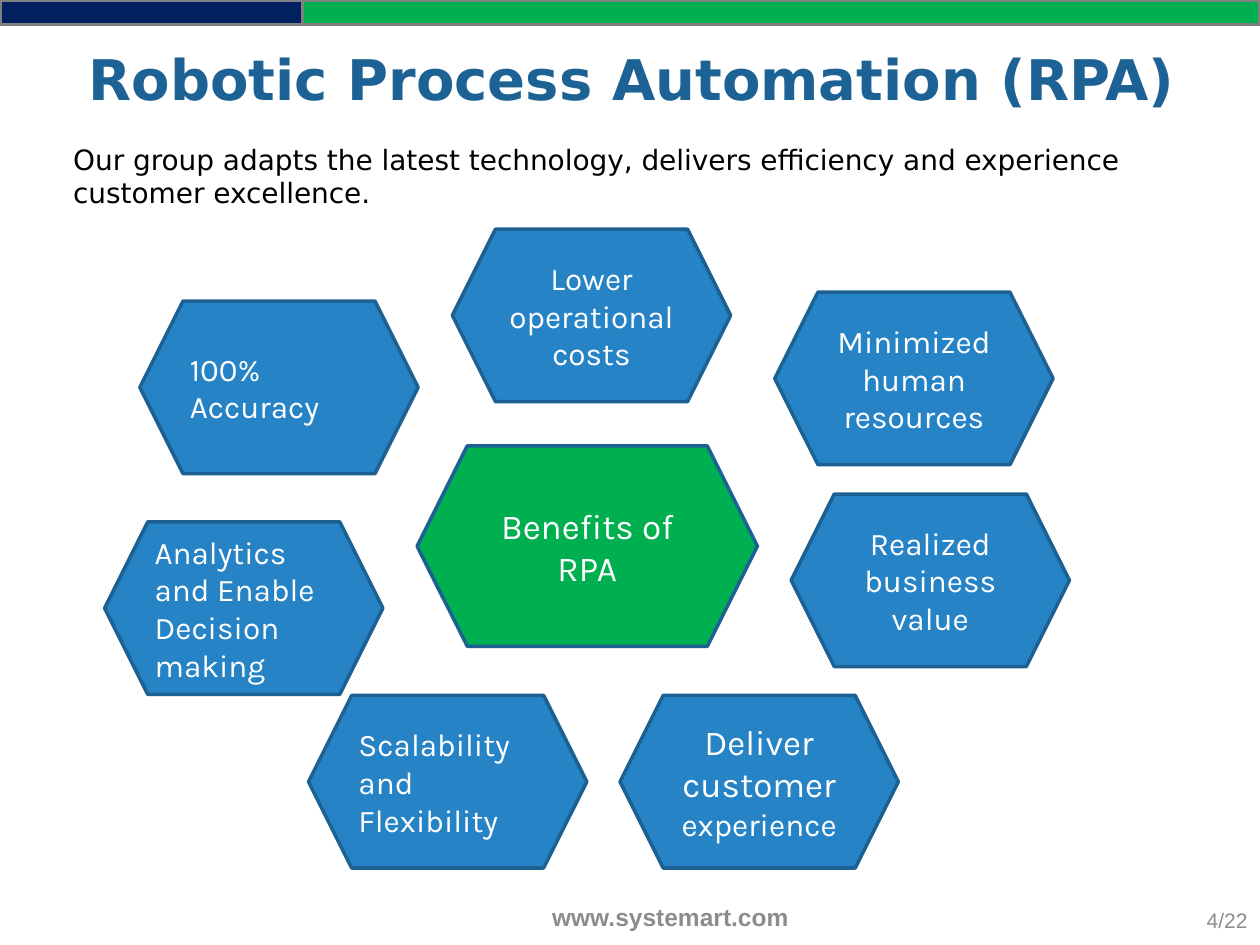
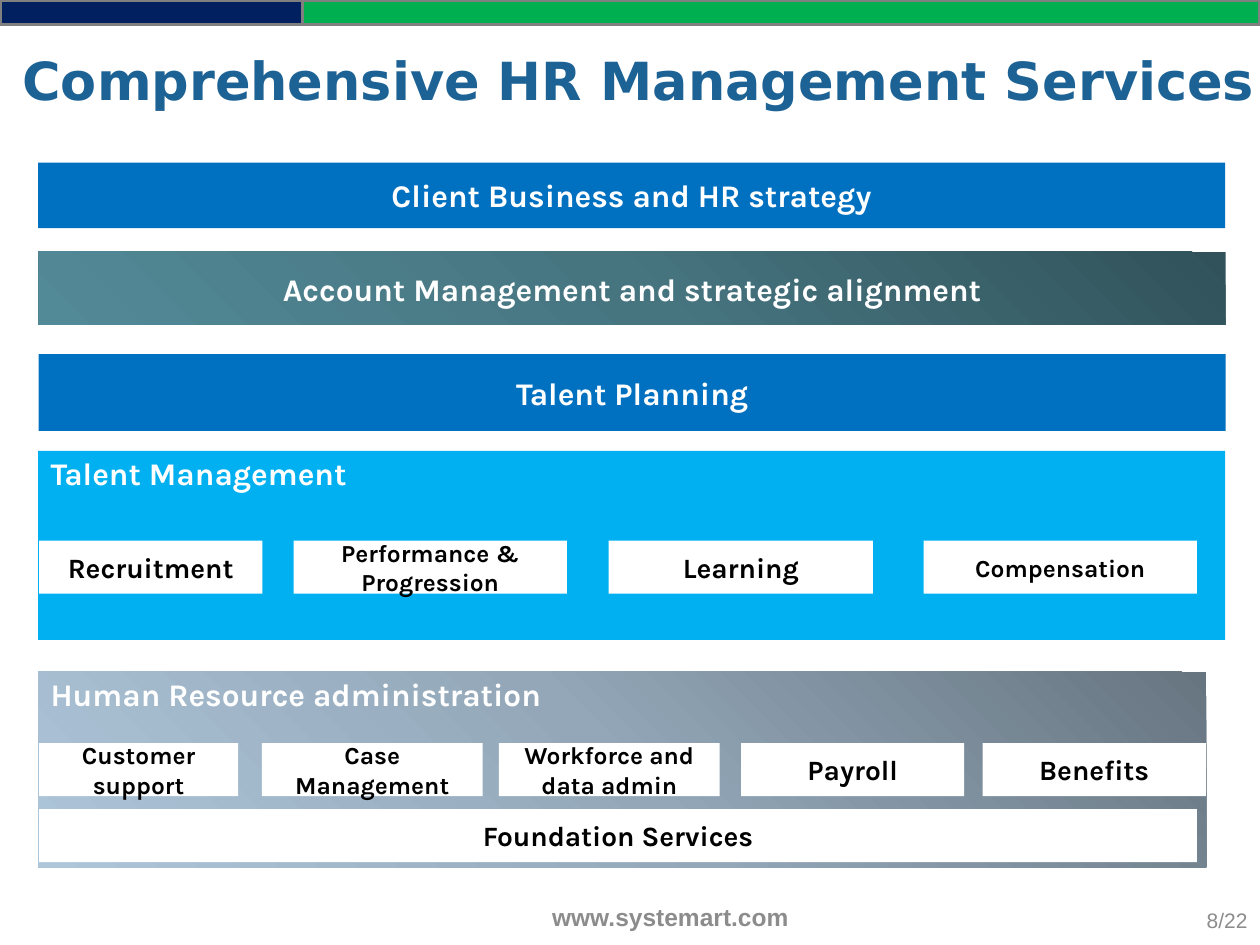
from copy import deepcopy
from dataclasses import dataclass
from typing import Optional

from pptx import Presentation
from pptx.dml.color import RGBColor
from pptx.enum.shapes import MSO_SHAPE
from pptx.enum.text import MSO_ANCHOR, MSO_AUTO_SIZE, PP_ALIGN
from pptx.oxml.ns import qn
from pptx.presentation import Presentation as Deck
from pptx.shapes.autoshape import Shape
from pptx.slide import Slide
from pptx.text.text import TextFrame
from pptx.util import Cm, Pt

WHITE = RGBColor(0xFF, 0xFF, 0xFF)
BLACK = RGBColor(0x00, 0x00, 0x00)
GREEN = RGBColor(0x00, 0xB0, 0x50)
NAVY = RGBColor(0x00, 0x20, 0x60)
BAND_EDGE = RGBColor(0x80, 0x80, 0x80)
TITLE_BLUE = RGBColor(0x1D, 0x62, 0x94)
FOOTER_GREY = RGBColor(0x8C, 0x8C, 0x8C)
HEXAGON_BLUE = RGBColor(0x26, 0x83, 0xC6)
HEXAGON_EDGE = RGBColor(0x1C, 0x61, 0x92)
STRATEGY_BLUE = RGBColor(0x00, 0x70, 0xC0)
TALENT_BLUE = RGBColor(0x00, 0xB0, 0xF0)
TEAL_GRADIENT = (RGBColor(0x31, 0x52, 0x5A), RGBColor(0x46, 0x75, 0x80),
                 RGBColor(0x53, 0x8A, 0x98))
STEEL_GRADIENT = (RGBColor(0x67, 0x75, 0x81), RGBColor(0x93, 0xA7, 0xB8),
                  RGBColor(0xAE, 0xC6, 0xDA))

TITLE_FONT = "DejaVu Sans"
SHAPE_FONT = "Karla"
FOOTER_FONT = "Arial"
PAGE_COUNT = 22


@dataclass(frozen=True)
class Area:
    """Place and size in centimetres."""
    left: float
    top: float
    width: float
    height: float

    def lengths(self) -> tuple[Cm, Cm, Cm, Cm]:
        return Cm(self.left), Cm(self.top), Cm(self.width), Cm(self.height)


@dataclass(frozen=True)
class Benefit:
    text: str
    left: float
    top: float
    align: PP_ALIGN = PP_ALIGN.CENTER
    size: int = 18
    smaller_ending: str = ""


@dataclass(frozen=True)
class Layer:
    text: str
    area: Area
    fill: RGBColor | tuple[RGBColor, ...]
    is_panel: bool = False


@dataclass(frozen=True)
class Tile:
    text: str
    left: float
    width: float
    size: int = 14


BENEFIT_WIDTH, BENEFIT_HEIGHT = 5.61, 3.48
BENEFITS = (
    Benefit("Lower operational costs", 9.12, 4.62),
    Benefit("100% Accuracy", 2.82, 6.07, PP_ALIGN.LEFT),
    Benefit("Minimized human resources", 15.62, 5.89),
    Benefit("Realized business value", 15.95, 9.96),
    Benefit("Deliver customer ", 12.5, 14.02, size=20, smaller_ending="experience"),
    Benefit("Scalability and Flexibility", 6.22, 14.02, PP_ALIGN.LEFT),
    Benefit("Analytics and Enable Decision making", 2.11, 10.52, PP_ALIGN.LEFT),
)

LAYERS = (
    Layer("Client Business and HR strategy", Area(0.77, 3.28, 23.93, 1.32), STRATEGY_BLUE),
    Layer("Account Management and strategic alignment",
          Area(0.78, 5.08, 23.93, 1.47), TEAL_GRADIENT),
    Layer("Talent Planning", Area(0.78, 7.14, 23.93, 1.55), STRATEGY_BLUE),
    Layer("Talent Management", Area(0.77, 9.09, 23.93, 3.81), TALENT_BLUE, True),
    Layer("Human Resource administration",
          Area(0.77, 13.54, 23.55, 3.94), STEEL_GRADIENT, True),
)

TILE_HEIGHT = 1.07
TILE_ROWS = {
    10.9: (
        Tile("Recruitment", 0.79, 4.5, 16),
        Tile("Performance & Progression", 5.92, 5.51),
        Tile("Learning", 12.27, 5.33, 16),
        Tile("Compensation", 18.62, 5.51),
    ),
    14.98: (
        Tile("Customer support", 0.79, 4.01),
        Tile("Case Management", 5.28, 4.45),
        Tile("Workforce and data admin", 10.06, 4.45),
        Tile("Payroll", 14.94, 4.5, 16),
        Tile("Benefits", 19.81, 4.5, 16),
    ),
    16.31: (Tile("Foundation Services", 0.79, 23.34, 16),),
}


def write(frame: TextFrame, text: str, *, size: int, color: RGBColor,
          font: str = SHAPE_FONT, bold: bool = False,
          align: PP_ALIGN = PP_ALIGN.CENTER,
          anchor: MSO_ANCHOR = MSO_ANCHOR.MIDDLE) -> None:
    """Append a formatted span to the first paragraph of the frame."""
    frame.word_wrap = True
    frame.auto_size = MSO_AUTO_SIZE.NONE
    frame.vertical_anchor = anchor
    para = frame.paragraphs[0]
    para.alignment = align
    para.space_before = Pt(0)
    span = para.add_run()
    span.text = text
    span.font.name = font
    span.font.size = Pt(size)
    span.font.bold = bold
    span.font.color.rgb = color


def fill_gradient(shape: Shape, colors: tuple[RGBColor, ...]) -> None:
    """Spread the colours evenly from the top right to the bottom left."""
    shape.fill.gradient()
    shape.fill.gradient_angle = 225
    stop_list = shape._element.spPr.find(qn("a:gradFill")).find(qn("a:gsLst"))
    while len(stop_list) < len(colors):
        stop_list.append(deepcopy(stop_list[0]))
    for index, (stop, color) in enumerate(zip(shape.fill.gradient_stops, colors)):
        stop.color.rgb = color
        stop.position = index / (len(colors) - 1)


def add_box(page: Slide, area: Area, fill: RGBColor | tuple[RGBColor, ...],
            kind: MSO_SHAPE = MSO_SHAPE.RECTANGLE,
            edge: Optional[RGBColor] = None) -> Shape:
    box = page.shapes.add_shape(kind, *area.lengths())
    box.shadow.inherit = False
    if isinstance(fill, RGBColor):
        box.fill.solid()
        box.fill.fore_color.rgb = fill
    else:
        fill_gradient(box, fill)
    if edge is None:
        box.line.fill.background()
    else:
        box.line.color.rgb = edge
        box.line.width = Pt(2)
    return box


def place(placeholder: Shape, area: Area) -> None:
    (placeholder.left, placeholder.top,
     placeholder.width, placeholder.height) = area.lengths()


def add_page(deck: Deck, layout: int, number: int, title: str, area: Area,
             size: int, align: PP_ALIGN) -> Slide:
    """Add a slide with the shared bands, title style and footer."""
    page = deck.slides.add_slide(deck.slide_layouts[layout])
    for width, color in ((25.4, GREEN), (6.1, NAVY)):
        add_box(page, Area(0, 0, width, 0.5), color, edge=BAND_EDGE)
    place(page.shapes.title, area)
    write(page.shapes.title.text_frame, title, size=size, color=TITLE_BLUE,
          font=TITLE_FONT, bold=True, align=align)
    site = page.shapes.add_textbox(*Area(8.92, 17.98, 9.19, 1.02).lengths())
    write(site.text_frame, "www.systemart.com", size=14, color=FOOTER_GREY,
          font=FOOTER_FONT, bold=True)
    counter = page.shapes.add_textbox(*Area(15.88, 18.03, 9.52, 1.02).lengths())
    write(counter.text_frame, f"{number}/{PAGE_COUNT}", size=12, color=FOOTER_GREY,
          font=FOOTER_FONT, align=PP_ALIGN.RIGHT)
    return page


def add_lead(page: Slide, text: str) -> None:
    """Fill the body placeholder with one paragraph without a bullet."""
    body = page.placeholders[1]
    place(body, Area(1.22, 2.74, 22.86, 14.27))
    properties = body.text_frame.paragraphs[0]._p.get_or_add_pPr()
    properties.set("marL", "0")
    properties.set("indent", "0")
    properties.append(properties.makeelement(qn("a:buNone"), {}))
    write(body.text_frame, text, size=16, color=BLACK, font=TITLE_FONT,
          align=PP_ALIGN.LEFT, anchor=MSO_ANCHOR.TOP)


def build_benefits(deck: Deck) -> None:
    page = add_page(deck, 1, 4, "Robotic Process Automation (RPA)",
                    Area(-0.1, 0.58, 25.68, 1.98), 32, PP_ALIGN.CENTER)
    add_lead(page, "Our group adapts the latest technology, delivers efficiency "
                   "and experience customer excellence.")
    for benefit in BENEFITS:
        area = Area(benefit.left, benefit.top, BENEFIT_WIDTH, BENEFIT_HEIGHT)
        box = add_box(page, area, HEXAGON_BLUE, MSO_SHAPE.HEXAGON, HEXAGON_EDGE)
        write(box.text_frame, benefit.text, size=benefit.size, color=WHITE,
              align=benefit.align)
        if benefit.smaller_ending:
            write(box.text_frame, benefit.smaller_ending, size=18, color=WHITE,
                  align=benefit.align)
    center = add_box(page, Area(8.41, 8.99, 6.86, 4.04), GREEN,
                     MSO_SHAPE.HEXAGON, HEXAGON_EDGE)
    write(center.text_frame, "Benefits of RPA", size=20, color=WHITE)


def build_services(deck: Deck) -> None:
    page = add_page(deck, 5, 8, "Comprehensive HR Management Services",
                    Area(0.2, 0.33, 26.04, 2.54), 30, PP_ALIGN.LEFT)
    for layer in LAYERS:
        box = add_box(page, layer.area, layer.fill)
        if layer.is_panel:
            box.text_frame.margin_top = Cm(0.07)
        write(box.text_frame, layer.text, size=18, color=WHITE, bold=True,
              align=PP_ALIGN.LEFT if layer.is_panel else PP_ALIGN.CENTER,
              anchor=MSO_ANCHOR.TOP if layer.is_panel else MSO_ANCHOR.MIDDLE)
    for top, tiles in TILE_ROWS.items():
        for tile in tiles:
            box = add_box(page, Area(tile.left, top, tile.width, TILE_HEIGHT), WHITE)
            write(box.text_frame, tile.text, size=tile.size, color=BLACK, bold=True)


def main() -> None:
    deck = Presentation()
    deck.slide_width, deck.slide_height = Cm(25.4), Cm(19.05)
    build_benefits(deck)
    build_services(deck)
    deck.save("out.pptx")


if __name__ == "__main__":
    main()
